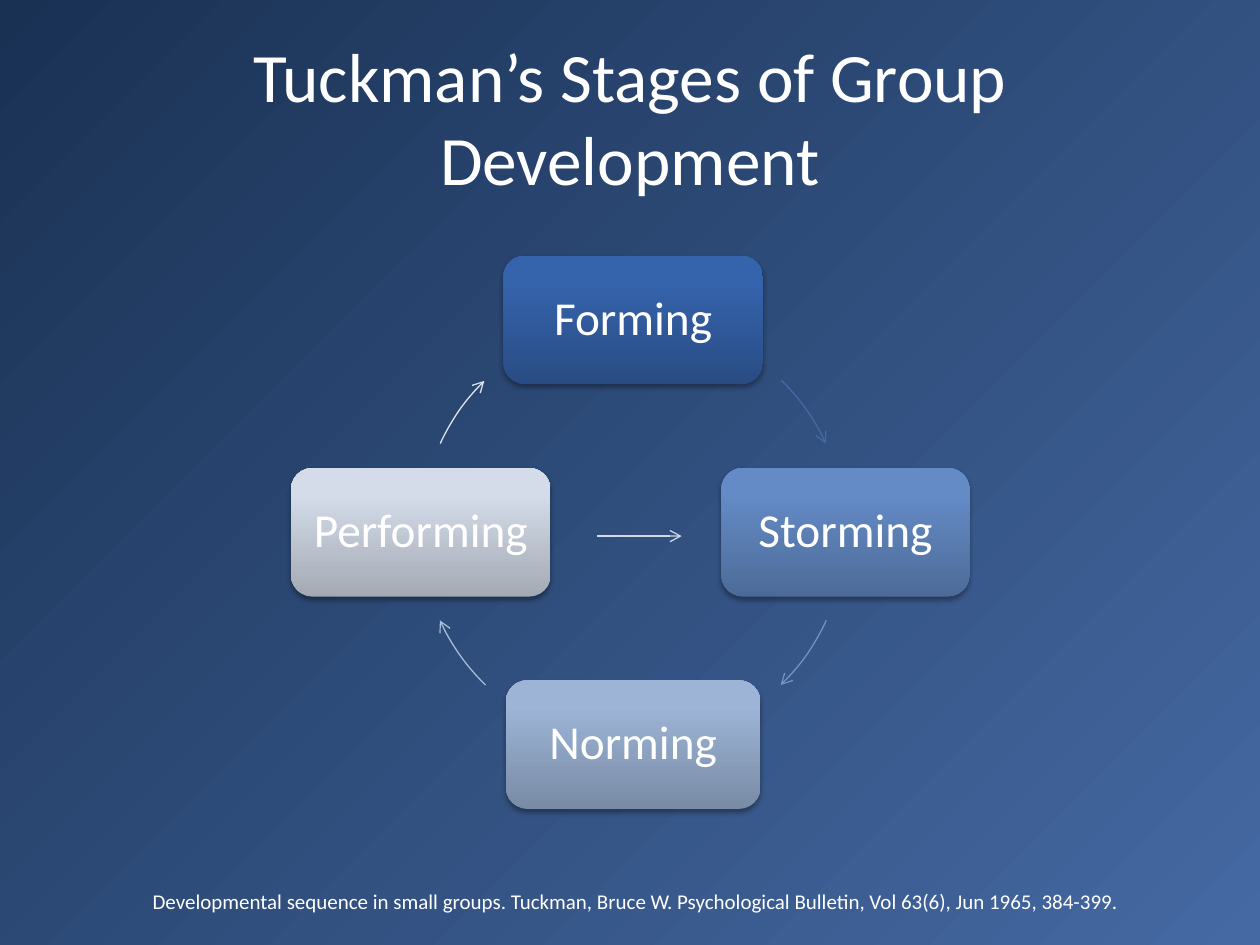
from copy import deepcopy
from math import cos, radians, sin

from pptx import Presentation
from pptx.dml.color import RGBColor
from pptx.enum.shapes import MSO_CONNECTOR, MSO_SHAPE
from pptx.enum.text import MSO_ANCHOR, MSO_AUTO_SIZE, PP_ALIGN
from pptx.oxml import parse_xml
from pptx.oxml.ns import nsdecls, qn
from pptx.util import Inches, Pt

COLORS = {
    "background_start": "193153",
    "background_end": "4569A3",
    "text": "FFFFFF",
    "center_arrow": "D0D9E5",
    "shadow": "000000",
}
STAGES = [
    ("Forming", 270, 2.06, ("294C84", "3563AC", "3362AF"), "4569A3"),
    ("Storming", 0, 1.97, ("4D6B98", "648BC6", "638BC8"), "7392C0"),
    ("Norming", 90, 2.02, ("798BA5", "9DB4D6", "9DB5D8"), "A9BBD6"),
    ("Performing", 180, 2.06, ("A3AAB3", "D4DCE9", "D4DDEB"), "DDE4EE"),
]
BOX_HEIGHT = 1.02
ARC_DEGREES = {270: (314.3, 335.3), 0: (24.5, 46), 90: (134, 155.5), 180: (204.7, 225.5)}


def rgb(value):
    return RGBColor.from_string(value)


def write_text(shape, text, size, inset=0.1, line_spacing=None):
    frame = shape.text_frame
    frame.word_wrap = True
    frame.auto_size = MSO_AUTO_SIZE.NONE
    frame.vertical_anchor = MSO_ANCHOR.MIDDLE
    frame.margin_left = frame.margin_right = Inches(inset)
    paragraph = frame.paragraphs[0]
    paragraph.alignment = PP_ALIGN.CENTER
    if line_spacing:
        paragraph.line_spacing = line_spacing
    run = paragraph.add_run()
    run.text = text
    run.font.name = "Calibri"
    run.font.size = Pt(size)
    run.font.color.rgb = rgb(COLORS["text"])


def fill_gradient(fill, stops, angle):
    fill.gradient_angle = angle
    for stop, (position, color) in zip(fill.gradient_stops, stops):
        stop.position = position
        stop.color.rgb = rgb(color)


def style_arrow(shape, color):
    shape.line.color.rgb = rgb(color)
    shape.line.width = Pt(0.75)
    line = shape.line._get_or_add_ln()
    line.append(parse_xml(f'<a:tailEnd {nsdecls("a")} type="arrow"/>'))


def add_shadow(shape):
    shape._element.spPr.append(parse_xml(
        f'<a:effectLst {nsdecls("a")}>'
        f'<a:outerShdw blurRad="{Pt(3.1)}" dist="{Pt(1.8)}" dir="5400000" rotWithShape="0">'
        f'<a:srgbClr val="{COLORS["shadow"]}"><a:alpha val="35000"/></a:srgbClr>'
        '</a:outerShdw></a:effectLst>'))


def add_stage(slide, name, center_x, center_y, width, colors):
    box = slide.shapes.add_shape(
        MSO_SHAPE.ROUNDED_RECTANGLE,
        Inches(center_x - width / 2), Inches(center_y - BOX_HEIGHT / 2),
        Inches(width), Inches(BOX_HEIGHT))
    box.fill.gradient()
    stop_list = box._element.spPr.find(".//" + qn("a:gsLst"))
    stop_list.append(deepcopy(stop_list[-1]))
    fill_gradient(box.fill, zip((0, 0.8, 1), colors), 90)
    box.line.fill.background()
    add_shadow(box)
    write_text(box, name, 27, inset=0.11, line_spacing=0.9)


def add_arc(slide, left, top, size, start, end, color):
    arc = slide.shapes.add_shape(
        MSO_SHAPE.ARC, Inches(left), Inches(top), Inches(size), Inches(size))
    for index, degrees in enumerate((start, end)):
        arc.adjustments[index] = degrees * 0.6
    arc.fill.background()
    arc.shadow.inherit = False
    style_arrow(arc, color)


def add_cycle(slide, left, top, size):
    radius = size / 2
    for name, degrees, width, colors, arrow_color in STAGES:
        center_x = left + radius * (1 + cos(radians(degrees)))
        center_y = top + radius * (1 + sin(radians(degrees)))
        add_stage(slide, name, center_x, center_y, width, colors)
        add_arc(slide, left, top, size, *ARC_DEGREES[degrees], arrow_color)
    arrow_y = Inches(top + radius + 0.03)
    arrow = slide.shapes.add_connector(
        MSO_CONNECTOR.STRAIGHT, Inches(left + 1.4), arrow_y, Inches(left + 2.07), arrow_y)
    style_arrow(arrow, COLORS["center_arrow"])
    arrow._element.spPr.append(parse_xml(f'<a:effectLst {nsdecls("a")}/>'))


def add_title(slide, left, top, width, height):
    title = slide.shapes.title
    title.left, title.top = Inches(left), Inches(top)
    title.width, title.height = Inches(width), Inches(height)
    write_text(title, "Tuckman’s Stages of Group Development", 39.6)


def add_citation(slide, left, top, width, height):
    citation = slide.shapes.add_textbox(
        Inches(left), Inches(top), Inches(width), Inches(height))
    write_text(citation, "Developmental sequence in small groups. Tuckman, Bruce W. "
               "Psychological Bulletin, Vol 63(6), Jun 1965, 384-399.", 12)


def main():
    presentation = Presentation()
    presentation.slide_width, presentation.slide_height = Inches(10), Inches(7.5)
    slide = presentation.slides.add_slide(presentation.slide_layouts[5])
    background = slide.background.fill
    background.gradient()
    fill_gradient(background, [(0, COLORS["background_start"]),
                               (1, COLORS["background_end"])], 315)
    add_title(slide, 0.5, 0.3, 9, 1.25)
    add_citation(slide, 0.67, 6.95, 8.75, 0.4)
    add_cycle(slide, 3.34, 2.54, 3.37)
    presentation.save("out.pptx")


if __name__ == "__main__":
    main()
